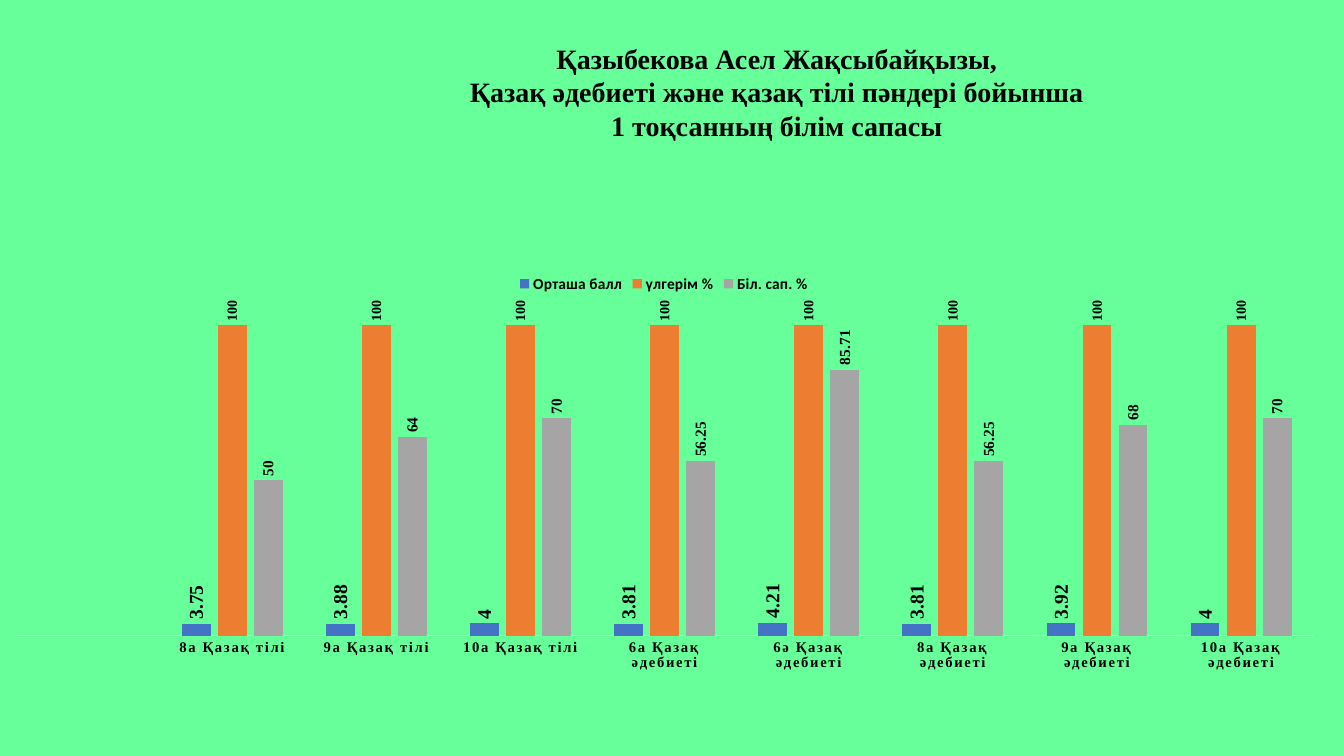
from dataclasses import dataclass

from pptx import Presentation
from pptx.chart.data import CategoryChartData
from pptx.dml.color import RGBColor
from pptx.enum import chart as charts, text
from pptx.oxml import parse_xml
from pptx.oxml.ns import nsdecls
from pptx.util import Inches, Pt


@dataclass(frozen=True)
class Theme:
    background: str = "66FF99"
    ink: str = "000000"
    axis: str = "D9D9D9"
    serif: str = "Times New Roman"
    sans: str = "Calibri"
    title_size: float = 20
    legend_size: float = 11
    category_size: float = 10.5


THEME = Theme()
TITLE = [
    "Қазыбекова Асел Жақсыбайқызы,",
    "Қазақ әдебиеті және қазақ тілі пәндері бойынша\v1 тоқсанның білім сапасы",
]
CLASSES = [
    "", "8а Қазақ тілі", "9а Қазақ тілі", "10а Қазақ тілі",
    "6а Қазақ әдебиеті", "6ә Қазақ әдебиеті", "8а Қазақ әдебиеті",
    "9а Қазақ әдебиеті", "10а Қазақ әдебиеті",
]
# Name, values, bar colour, label size
MEASURES = [
    ("Орташа балл", [None, 3.75, 3.88, 4, 3.81, 4.21, 3.81, 3.92, 4], "4472C4", 14),
    ("үлгерім %", [None] + [100] * 8, "ED7D31", 10),
    ("Біл. сап. %", [None, 50, 64, 70, 56.25, 85.71, 56.25, 68, 70], "A5A5A5", 11),
]


def color(value):
    return RGBColor.from_string(value)


def style_font(font, name, size):
    font.name, font.size, font.bold = name, Pt(size), True
    font.color.rgb = color(THEME.ink)


def add_title(page, box):
    title = page.shapes.title
    title.left, title.top, title.width, title.height = map(Inches, box)
    frame = title.text_frame
    frame.text = "\n".join(TITLE)
    frame.word_wrap = True
    frame.auto_size = text.MSO_AUTO_SIZE.NONE
    frame.vertical_anchor = text.MSO_ANCHOR.TOP
    for para in frame.paragraphs:
        para.alignment = text.PP_ALIGN.CENTER
        para.line_spacing = 1.0
        para.space_before = Pt(0)
        for span in para.runs:
            style_font(span.font, THEME.serif, THEME.title_size)


def style_axes(chart):
    values = chart.value_axis
    values.minimum_scale, values.maximum_scale = 0, 120
    values.has_major_gridlines = False
    values.visible = False

    classes = chart.category_axis
    classes.major_tick_mark = charts.XL_TICK_MARK.NONE
    classes.format.line.color.rgb = color(THEME.axis)
    classes.format.line.width = Pt(0.75)
    style_font(classes.tick_labels.font, THEME.serif, THEME.category_size)
    for props in chart.element.xpath("//c:catAx/c:txPr//a:defRPr"):
        props.set("spc", "120")


def style_bars(chart):
    plot = chart.plots[0]
    plot.gap_width, plot.overlap = 150, -25
    plot.vary_by_categories = False
    for series, (_, _, fill, label_size) in zip(plot.series, MEASURES):
        series.format.fill.solid()
        series.format.fill.fore_color.rgb = color(fill)
        labels = series.data_labels
        labels.show_value = True
        labels.position = charts.XL_LABEL_POSITION.OUTSIDE_END
        style_font(labels.font, THEME.serif, label_size)
    for body in chart.element.xpath("//c:dLbls/c:txPr/a:bodyPr"):
        body.set("rot", "-5400000")
        body.set("vert", "horz")


def place_plot(chart, x, y, w, h):
    """Fix the inner plot area, in fractions of the chart."""
    area = chart.element.xpath("c:chart/c:plotArea")[0]
    for layout in area.xpath("c:layout"):
        area.remove(layout)
    parts = [("layoutTarget", "inner"), ("xMode", "edge"), ("yMode", "edge"),
             ("x", x), ("y", y), ("w", w), ("h", h)]
    settings = "".join(f'<c:{tag} val="{value}"/>' for tag, value in parts)
    area.insert(0, parse_xml(
        f'<c:layout {nsdecls("c")}><c:manualLayout>{settings}</c:manualLayout></c:layout>'))


def add_results_chart(page, box):
    results = CategoryChartData()
    results.categories = CLASSES
    for name, values, _, _ in MEASURES:
        results.add_series(name, values)
    chart = page.shapes.add_chart(
        charts.XL_CHART_TYPE.COLUMN_CLUSTERED, *map(Inches, box), results).chart
    chart.has_title = False
    chart.font.name, chart.font.size = THEME.sans, Pt(10)
    chart.has_legend = True
    chart.legend.position = charts.XL_LEGEND_POSITION.TOP
    chart.legend.include_in_layout = False
    style_font(chart.legend.font, THEME.sans, THEME.legend_size)
    style_axes(chart)
    style_bars(chart)
    place_plot(chart, 0.012, 0, 0.977, 0.79)


def main():
    deck = Presentation()
    deck.slide_width, deck.slide_height = Inches(13.33), Inches(7.5)
    page = deck.slides.add_slide(deck.slide_layouts[5])
    page.background.fill.solid()
    page.background.fill.fore_color.rgb = color(THEME.background)
    add_results_chart(page, (0, 2.61, 13.17, 4.68))
    add_title(page, (4.37, 0.36, 6.67, 1.11))
    deck.save("out.pptx")


if __name__ == "__main__":
    main()
